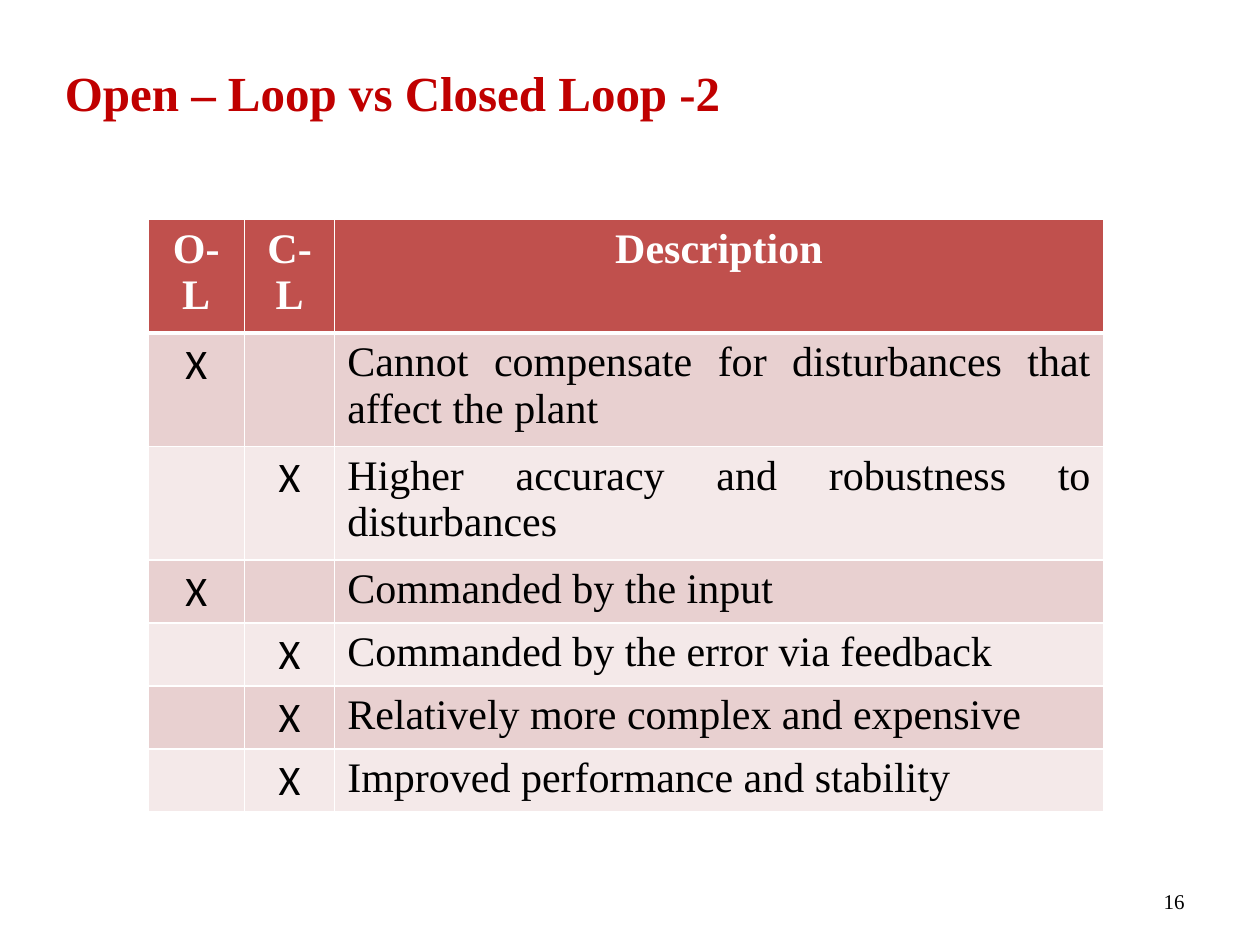
import dataclasses

import pptx
import pptx.dml.color
import pptx.enum.text
import pptx.oxml.ns
import pptx.util
from lxml import etree

Pt = pptx.util.Pt
ALIGN = pptx.enum.text.PP_ALIGN
ANCHOR = pptx.enum.text.MSO_ANCHOR


@dataclasses.dataclass(frozen=True)
class Theme:
    serif: str = "Times New Roman"
    sans: str = "Calibri"
    title_color: str = "C00000"
    text_color: str = "000000"
    white: str = "FFFFFF"
    header_fill: str = "C0504D"
    bands: tuple = ("E8D0D0", "F4E9E9")
    title_size: int = 28
    table_size: int = 24
    number_size: int = 12
    thin: int = 1
    thick: int = 3


THEME = Theme()

HEADERS = ("O-L", "C-L", "Description")
# Marked column (0 open loop, 1 closed loop), description, row height
ROWS = (
    (0, "Cannot compensate for disturbances that affect the plant", 64.8),
    (1, "Higher accuracy and robustness to disturbances", 64.8),
    (0, "Commanded by the input", 36),
    (1, "Commanded by the error via feedback", 36),
    (1, "Relatively more complex and expensive", 36),
    (1, "Improved performance and stability", 36),
)
HEADER_HEIGHT = 36
COL_WIDTHS = (55.2, 51.6, 439.2)


def rgb(value):
    return pptx.dml.color.RGBColor.from_string(value)


def write(tf, text, size, color, font=THEME.serif, bold=False, align=ALIGN.LEFT):
    p = tf.paragraphs[0]
    p.alignment = align
    r = p.add_run()
    r.text = text
    r.font.name = font
    r.font.size = Pt(size)
    r.font.bold = bold
    r.font.color.rgb = rgb(color)


def add_text(slide, box, anchor, *args, **kwargs):
    tf = slide.shapes.add_textbox(*map(Pt, box)).text_frame
    tf.word_wrap = True
    tf.vertical_anchor = anchor
    write(tf, *args, **kwargs)


def style_cell(cell, fill, top, bottom):
    # Borders come before the fill in the cell properties
    tc_pr = cell._tc.get_or_add_tcPr()
    qn = pptx.oxml.ns.qn
    widths = {"lnL": THEME.thin, "lnR": THEME.thin, "lnT": top, "lnB": bottom}
    for side, width in widths.items():
        ln = etree.SubElement(tc_pr, qn(f"a:{side}"), w=str(Pt(width)))
        solid = etree.SubElement(ln, qn("a:solidFill"))
        etree.SubElement(solid, qn("a:srgbClr"), val=THEME.white)
    cell.fill.solid()
    cell.fill.fore_color.rgb = rgb(fill)


def add_comparison(slide, left, top):
    heights = [HEADER_HEIGHT] + [height for _, _, height in ROWS]
    table = slide.shapes.add_table(
        len(heights), len(COL_WIDTHS), Pt(left), Pt(top),
        Pt(sum(COL_WIDTHS)), Pt(sum(heights))).table
    for col, width in zip(table.columns, COL_WIDTHS):
        col.width = Pt(width)
    for row, height in zip(table.rows, heights):
        row.height = Pt(height)

    # Header row
    for cell, text in zip(table.rows[0].cells, HEADERS):
        style_cell(cell, THEME.header_fill, THEME.thin, THEME.thick)
        write(cell.text_frame, text, THEME.table_size, THEME.white,
              bold=True, align=ALIGN.CENTER)

    # Banded body rows
    for i, (mark, text, _) in enumerate(ROWS):
        cells = list(table.rows[i + 1].cells)
        for cell in cells:
            style_cell(cell, THEME.bands[i % 2],
                       THEME.thin if i else THEME.thick, THEME.thin)
        write(cells[mark].text_frame, "X", THEME.table_size, THEME.text_color,
              font=THEME.sans, align=ALIGN.CENTER)
        write(cells[2].text_frame, text, THEME.table_size, THEME.text_color,
              align=ALIGN.JUSTIFY)


def main():
    prs = pptx.Presentation()
    prs.slide_width, prs.slide_height = Pt(720), Pt(540)
    slide = prs.slides.add_slide(prs.slide_layouts[6])

    # Title
    add_text(slide, (30, 24, 630, 49), ANCHOR.BOTTOM,
             "Open – Loop vs Closed Loop -2", THEME.title_size,
             THEME.title_color, bold=True)

    # Comparison table
    add_comparison(slide, 84.5, 125.5)

    # Slide number
    add_text(slide, (630, 500.5, 54, 29), ANCHOR.MIDDLE, "16",
             THEME.number_size, THEME.text_color, align=ALIGN.RIGHT)

    prs.save("out.pptx")


if __name__ == "__main__":
    main()
